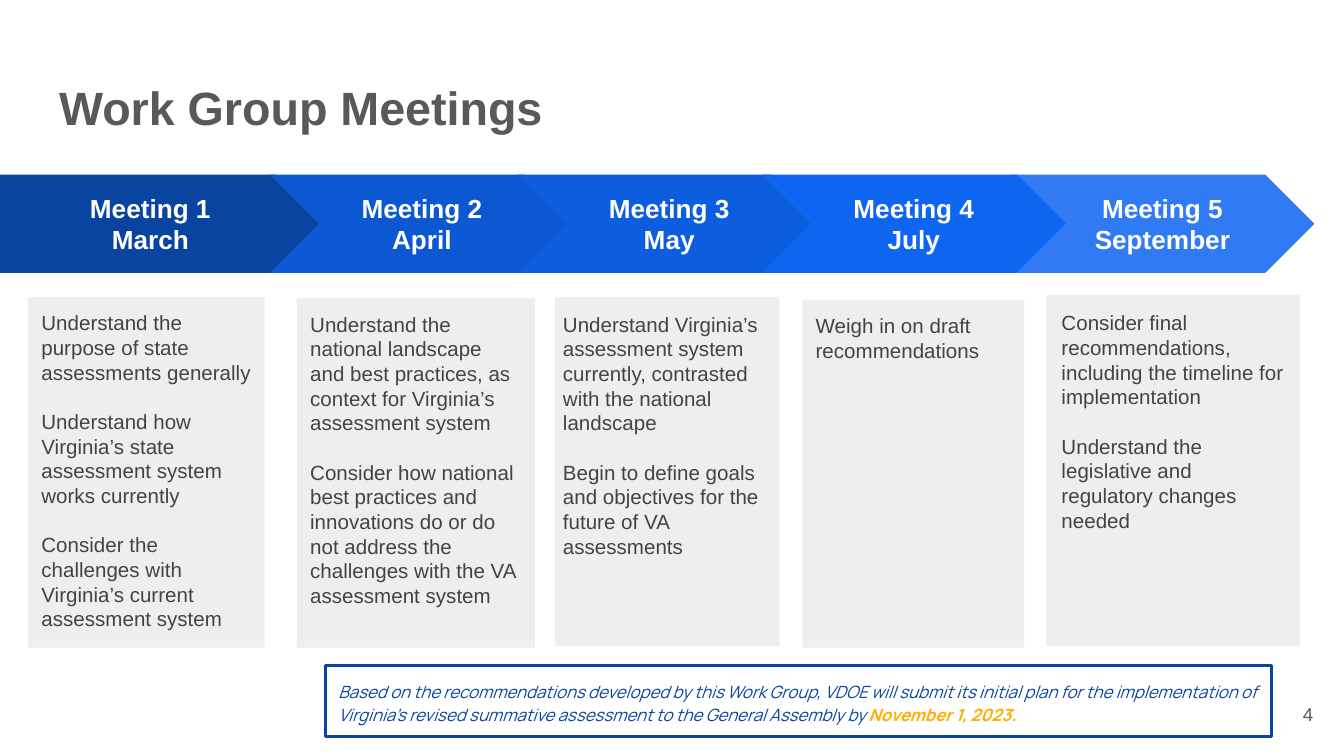
from pptx import Presentation
from pptx.dml.color import RGBColor
from pptx.enum import shapes, text
from pptx.util import Inches, Pt

WHITE = RGBColor(0xFF, 0xFF, 0xFF)
TITLE_GRAY = RGBColor(0x59, 0x59, 0x59)
BODY_GRAY = RGBColor(0x43, 0x43, 0x43)
PANEL_GRAY = RGBColor(0xEE, 0xEE, 0xEE)
NAVY = RGBColor(0x09, 0x44, 0xA1)
BLUE_2 = RGBColor(0x0C, 0x58, 0xD3)
BLUE_3 = RGBColor(0x0D, 0x5D, 0xDF)
BLUE_4 = RGBColor(0x0E, 0x65, 0xF0)
BLUE_5 = RGBColor(0x30, 0x7B, 0xF3)
AMBER = RGBColor(0xFF, 0xAE, 0x00)

SHAPE = shapes.MSO_SHAPE
ALIGN = text.PP_ALIGN
ANCHOR = text.MSO_ANCHOR

HEADING = dict(size=Pt(14), name="Arial", bold=True, color=WHITE)
BODY = dict(size=Pt(11), name="Arial", color=BODY_GRAY)
NOTE = dict(size=Pt(9), name="Manrope", italic=True, color=NAVY)

ARROW_TOP, ARROW_HEIGHT = 1.3, 0.73

# Arrow left and width, colour, panel box, outline width, text box, heading, goals.
# Meeting 5 comes before Meeting 4, whose tip lies on top of it.
MEETINGS = [
    (0, 2.42, NAVY, (0.21, 2.21, 1.76, 2.61), 0, None, ["Meeting 1", "March"],
     ["Understand the purpose of state assessments generally",
      "Understand how Virginia’s state assessment system works currently",
      "Consider the challenges with Virginia’s current assessment system"]),
    (2.01, 2.26, BLUE_2, (2.21, 2.22, 1.77, 2.6), 0, None, ["Meeting 2", "April"],
     ["Understand the national landscape and best practices, as context for "
      "Virginia’s assessment system",
      "Consider how national best practices and innovations do or do not "
      "address the challenges with the VA assessment system"]),
    (3.85, 2.26, BLUE_3, (4.13, 2.21, 1.67, 2.6), 0, (4.09, 2.22, 1.78, 2.6),
     ["Meeting 3", "May"],
     ["Understand Virginia’s assessment system currently, contrasted with the "
      "national landscape",
      "Begin to define goals and objectives for the future of VA assessments"]),
    (7.52, 2.26, BLUE_5, (7.8, 2.21, 1.86, 2.58), 2.25, None,
     ["Meeting 5", "September"],
     ["Consider final recommendations, including the timeline for "
      "implementation",
      "Understand the legislative and regulatory changes needed"]),
    (5.67, 2.26, BLUE_4, (5.97, 2.23, 1.65, 2.59), 0, None, ["Meeting 4", "July"],
     ["Weigh in on draft recommendations"]),
]


def inches(box):
    return [Inches(length) for length in box]


def format_font(font, style):
    for key, value in style.items():
        if key == "color":
            font.color.rgb = value
        else:
            setattr(font, key, value)


def prepare_frame(shape, anchor=ANCHOR.TOP):
    frame = shape.text_frame
    settings = dict(word_wrap=True, vertical_anchor=anchor)
    for side in ("left", "top", "right", "bottom"):
        settings["margin_" + side] = Inches(0.1)
    for key, value in settings.items():
        setattr(frame, key, value)
    return frame


def add_block(slide, kind, box, fill=None, outline=None, outline_width=0):
    shape = slide.shapes.add_shape(kind, *inches(box))
    shape.shadow.inherit = False
    if fill is None:
        shape.fill.background()
    else:
        shape.fill.solid()
        shape.fill.fore_color.rgb = fill
    if outline_width:
        shape.line.color.rgb = outline
        shape.line.width = Pt(outline_width)
    else:
        shape.line.fill.background()
    return shape


def write_lines(shape, lines, style, align=ALIGN.LEFT, anchor=ANCHOR.TOP, gap=0):
    """Write one paragraph per line, with gap points between them."""
    frame = prepare_frame(shape, anchor)
    for index, line in enumerate(lines):
        paragraph = frame.add_paragraph() if index else frame.paragraphs[0]
        paragraph.alignment = align
        paragraph.space_before = Pt(gap if index else 0)
        run = paragraph.add_run()
        run.text = line
        format_font(run.font, style)


def add_title(slide, box):
    title = slide.shapes.title
    title.left, title.top, title.width, title.height = inches(box)
    style = dict(size=Pt(25), name="Arial", bold=True, color=TITLE_GRAY)
    write_lines(title, ["Work Group Meetings"], style)
    title.text_frame.auto_size = text.MSO_AUTO_SIZE.NONE


def add_meeting(slide, left, width, color, panel_box, outline_width, text_box,
                heading, goals):
    kind = SHAPE.CHEVRON if left else SHAPE.PENTAGON
    arrow = add_block(slide, kind, (left, ARROW_TOP, width, ARROW_HEIGHT), color)
    write_lines(arrow, heading, HEADING, ALIGN.CENTER, ANCHOR.MIDDLE)
    holder = add_block(slide, SHAPE.RECTANGLE, panel_box, PANEL_GRAY,
                       PANEL_GRAY, outline_width)
    if text_box:
        holder = slide.shapes.add_textbox(*inches(text_box))
    write_lines(holder, goals, BODY, gap=13.2)


def add_note(slide, box):
    note = add_block(slide, SHAPE.RECTANGLE, box, None, NAVY, 1.5)
    frame = prepare_frame(note)
    frame.auto_size = text.MSO_AUTO_SIZE.SHAPE_TO_FIT_TEXT
    paragraph = frame.paragraphs[0]
    spacing = dict(alignment=ALIGN.LEFT, line_spacing=1.15, space_after=Pt(2))
    for key, value in spacing.items():
        setattr(paragraph, key, value)
    parts = [
        ("Based on the recommendations developed by this Work Group, VDOE will "
         "submit its initial plan for the implementation of Virginia’s revised "
         "summative assessment to the General Assembly by ", NOTE),
        ("November 1, 2023.", dict(NOTE, bold=True, color=AMBER)),
    ]
    for words, style in parts:
        run = paragraph.add_run()
        run.text = words
        format_font(run.font, style)


def add_page_number(slide, box):
    number = slide.shapes.add_textbox(*inches(box))
    style = dict(size=Pt(10), name="Arial", color=TITLE_GRAY)
    write_lines(number, ["4"], style, ALIGN.RIGHT, ANCHOR.MIDDLE)


def main():
    presentation = Presentation()
    presentation.slide_width = Inches(10)
    presentation.slide_height = Inches(10) * 9 // 16
    slide = presentation.slides.add_slide(presentation.slide_layouts[5])
    add_title(slide, (0.34, 0.49, 9.32, 0.63))
    add_note(slide, (2.42, 4.95, 7.04, 0.53))
    add_page_number(slide, (9.27, 5.1, 0.6, 0.43))
    for meeting in MEETINGS:
        add_meeting(slide, *meeting)
    presentation.save("out.pptx")


if __name__ == "__main__":
    main()
